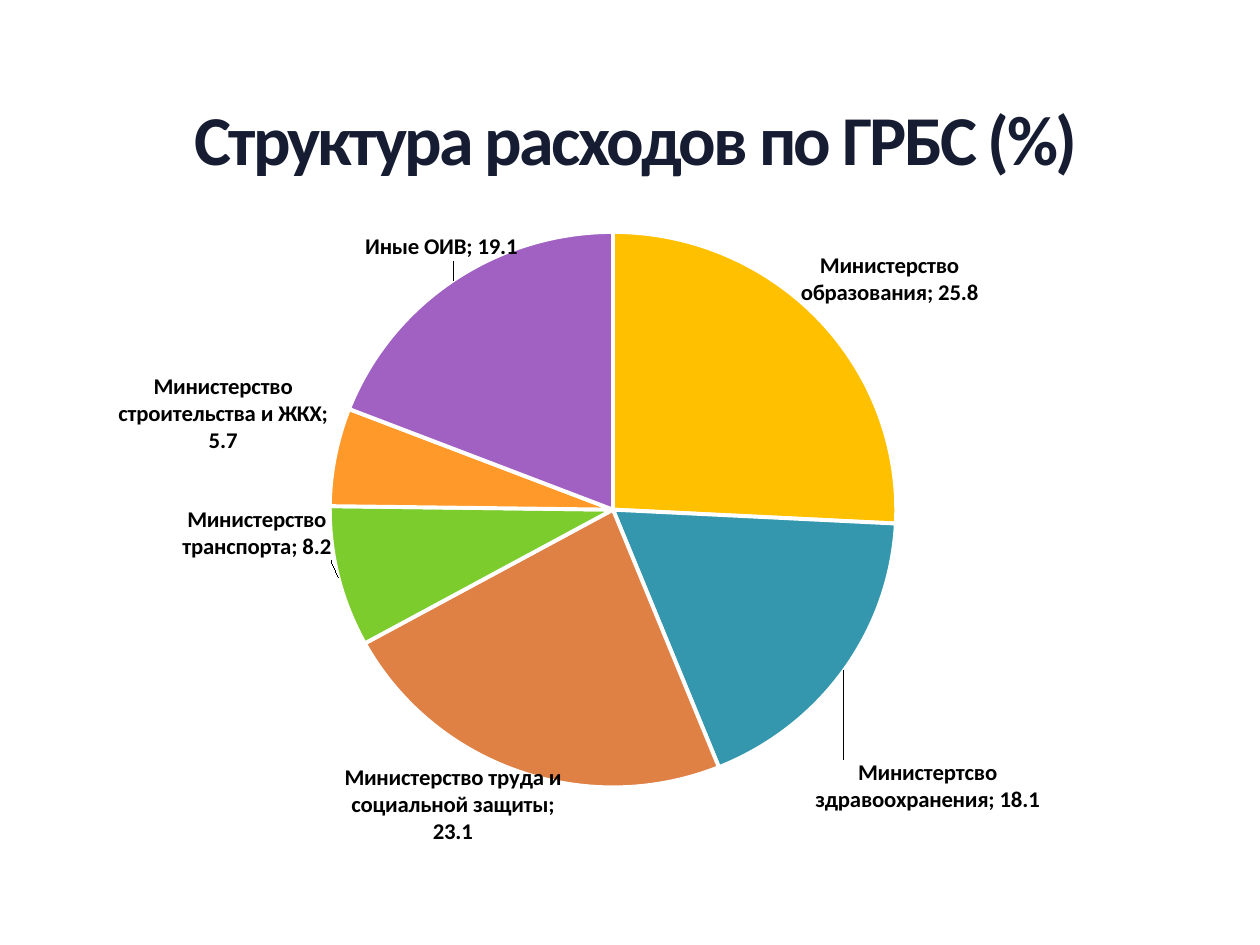
from lxml import etree
from pptx import Presentation
from pptx.chart.data import CategoryChartData
from pptx.dml.color import RGBColor
from pptx.enum.chart import XL_CHART_TYPE, XL_LABEL_POSITION
from pptx.enum.text import MSO_ANCHOR, PP_ALIGN
from pptx.oxml.ns import qn
from pptx.util import Inches, Pt

PIE = XL_CHART_TYPE.PIE
OUTSIDE = XL_LABEL_POSITION.OUTSIDE_END
CENTER = PP_ALIGN.CENTER
MIDDLE = MSO_ANCHOR.MIDDLE

SECTORS = [
    ("Министерство образования", 25.8, "FFC000", (-0.02, -0.01)),
    ("Министертсво здравоохранения", 18.1, "3497AE", (-0.03, 0.13)),
    ("Министерство труда и социальной защиты", 23.1, "DF8045", (0.04, -0.02)),
    ("Министерство транспорта", 8.2, "7DCC2E", (0, -0.11)),
    ("Министерство строительства и ЖКХ", 5.7, "FF9929", None),
    ("Иные ОИВ", 19.1, "A061C3", (0.06, -0.02)),
]


def color(value):
    return RGBColor.from_string(value)


def make_layout(**settings):
    layout = etree.Element(qn("c:layout"))
    manual = etree.SubElement(layout, qn("c:manualLayout"))
    for name, value in settings.items():
        etree.SubElement(manual, qn(f"c:{name}")).set("val", str(value))
    return layout


class SlideBuilder:
    font_name = "Calibri"
    title_color = "161D32"
    label_color = "000000"
    border_color = "FFFFFF"

    def __init__(self, deck):
        self.page = deck.slides.add_slide(deck.slide_layouts[5])

    def style_font(self, font, size, tone):
        font.name = self.font_name
        font.size = Pt(size)
        font.bold = True
        font.color.rgb = color(tone)

    def title(self, text, left, top, width, height):
        box = self.page.shapes.title
        box.left, box.top = Inches(left), Inches(top)
        box.width, box.height = Inches(width), Inches(height)
        frame = box.text_frame
        frame.text = text
        frame.word_wrap = True
        frame.vertical_anchor = MIDDLE
        frame.margin_left = frame.margin_right = 0
        frame.margin_top = frame.margin_bottom = 0
        para = frame.paragraphs[0]
        para.alignment = CENTER
        para.line_spacing = 0.9
        span = para.runs[0]
        self.style_font(span.font, 40, self.title_color)
        span.font._element.set("spc", "-150")

    def pie(self, sectors, left, top, width, height):
        data = CategoryChartData(number_format="0.0")
        data.categories = [sector[0] for sector in sectors]
        data.add_series("Series 1", [sector[1] for sector in sectors])
        chart = self.page.shapes.add_chart(
            PIE, Inches(left), Inches(top), Inches(width), Inches(height), data
        ).chart
        chart.has_legend = False
        chart.has_title = False
        chart.font.name = self.font_name
        chart.font.size = Pt(10)
        chart.font.color.rgb = color(self.label_color)
        self.place_plot(chart)
        chart.plots[0].vary_by_categories = True
        series = chart.plots[0].series[0]
        labels = series.data_labels
        labels.show_value = True
        labels.show_category_name = True
        labels.number_format = "0.0"
        labels.number_format_is_linked = False
        labels.position = OUTSIDE
        self.style_font(labels.font, 13, self.label_color)
        for index, (_, _, fill, offset) in enumerate(sectors):
            point = series.points[index]
            point.format.fill.solid()
            point.format.fill.fore_color.rgb = color(fill)
            point.format.line.color.rgb = color(self.border_color)
            point.format.line.width = Pt(2.25)
            if offset:
                self.move_label(series, index, offset)

    def place_plot(self, chart):
        area = chart.plots[0]._element.getparent()
        for old in area.findall(qn("c:layout")):
            area.remove(old)
        area.insert(0, make_layout(
            layoutTarget="inner", xMode="edge", yMode="edge",
            x=0.08, y=0.06, w=0.87, h=0.85))

    def move_label(self, series, index, offset):
        label = series.points[index].data_label
        self.style_font(label.font, 13, self.label_color)
        label.position = OUTSIDE
        for element in series._element.iter(qn("c:dLbl")):
            key = element.find(qn("c:idx"))
            if key.get("val") == str(index):
                key.addnext(make_layout(x=offset[0], y=offset[1]))
                element.find(qn("c:showCatName")).set("val", "1")


def main():
    deck = Presentation()
    deck.slide_width, deck.slide_height = Inches(10), Inches(7.5)
    builder = SlideBuilder(deck)
    builder.title("Структура расходов по ГРБС (%)", 0.2, 0.71, 9.69, 0.84)
    builder.pie(SECTORS, 0.2, 1.53, 9.06, 5.29)
    deck.save("out.pptx")


if __name__ == "__main__":
    main()
